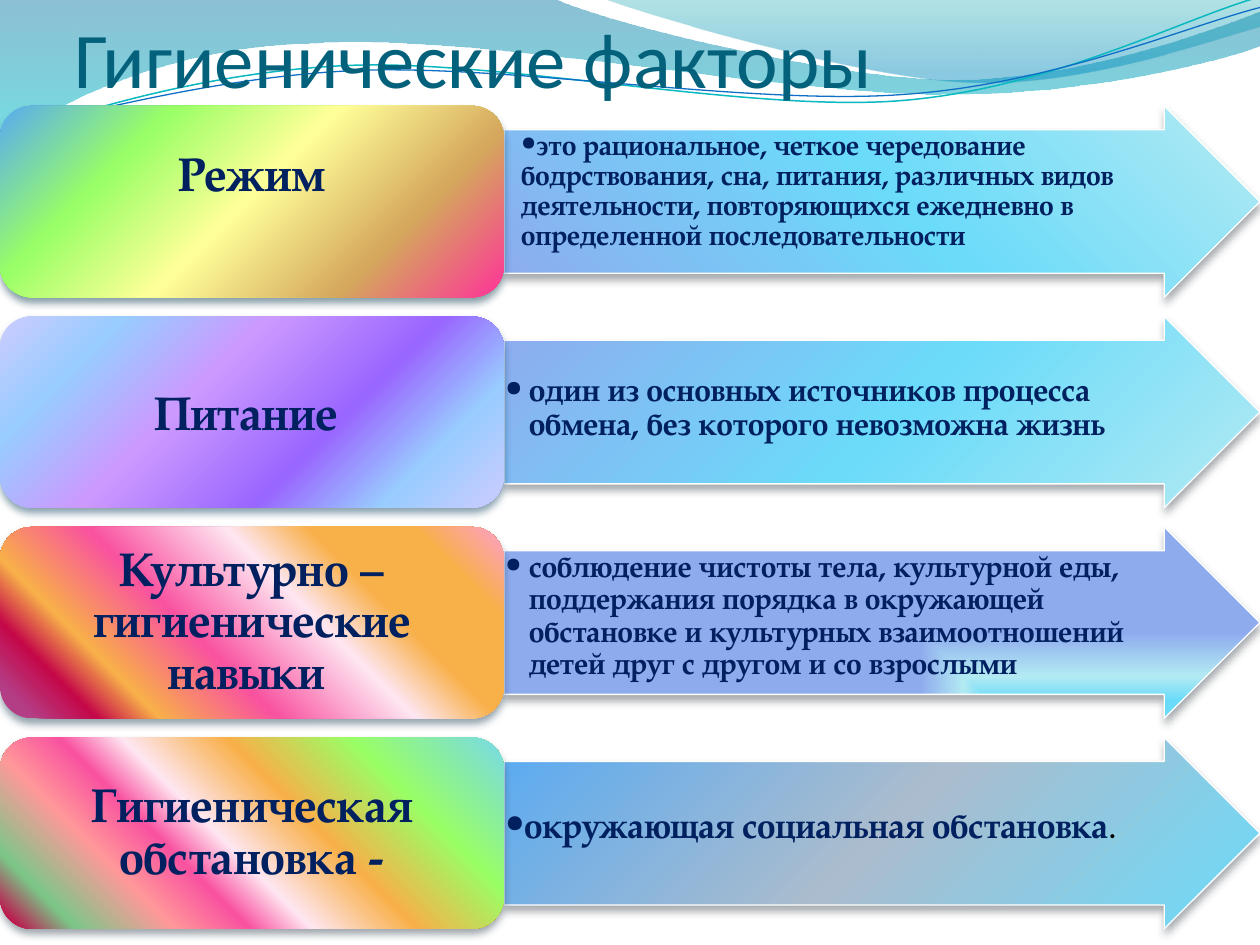
import math

import pptx
import pptx.util
import pptx.dml.color
import pptx.enum.shapes
import pptx.enum.text
import pptx.oxml.ns
import lxml.etree

Pt = pptx.util.Pt
RGBColor = pptx.dml.color.RGBColor
qn = pptx.oxml.ns.qn
Shape = pptx.enum.shapes.MSO_SHAPE
Anchor = pptx.enum.text.MSO_ANCHOR
Align = pptx.enum.text.PP_ALIGN

TITLE_COLOR = RGBColor(0x04, 0x61, 0x7B)
TEXT_COLOR = RGBColor(0x00, 0x20, 0x60)
BLACK = RGBColor(0, 0, 0)
WHITE = RGBColor(0xFF, 0xFF, 0xFF)
TEAL = RGBColor(0x0A, 0xB8, 0xBF)
BLUE = RGBColor(0x0F, 0x6F, 0xC6)
ARROW_SHADOW = RGBColor(0x47, 0x4E, 0x55)
TEXT_FONT = "TeX Gyre Pagella"

ROW_TOP, ROW_PITCH, ROW_HEIGHT = 60.5, 120.3, 109.4
LABEL_WIDTH, ARROW_WIDTH = 288, 432
STRAND_TURN = -2.7

# Focus rectangles of path gradients: left, top, right, bottom
TOP_LEFT, TOP_RIGHT = (0, 0, 100, 100), (100, 0, 0, 100)
BOTTOM_LEFT, BOTTOM_RIGHT = (0, 100, 100, 0), (100, 100, 0, 0)


def stops(text):
    """Read 'position:colour' or 'position:colour:opacity' gradient stops."""
    result = []
    for part in text.split():
        position, color, *opacity = part.split(":")
        result.append((int(position), RGBColor.from_string(color),
                       int(opacity[0]) if opacity else 100))
    return result


ARROW_STOPS = stops("0:8EABEE 52:6BDBFA 100:B3EAF2")

# Waves: a start point, then lines (one point) and curves (three points)
BANDS = [
    ([(0, 0), [(316.8, -0.7)],
      [(342.7, 12.2), (478.1, 45.4), (545.8, 45.4)],
      [(614.2, 45.4), (689.8, 18.7), (720, 6.5)], [(720.7, 25.9)],
      [(707.8, 31.7), (626.4, 54.7), (537.1, 54)],
      [(447.8, 54), (275, 20.2), (185, 24.5)],
      [(92.9, 25.9), (33.1, 59.8), (-0.7, 81.4)]],
     stops("0:0074A1:45 100:00C6CF:55")),
    ([(344.9, -0.7), [(366.5, 7.9), (491, 44.6), (553.7, 46.8)],
      [(616.3, 49.7), (691.9, 23), (720, 15.1)], [(720, 0)]],
     stops("0:00A1A9:30 80:008BBF:45")),
]
STRANDS = [
    ([(0, 79.9), [(34.6, 67), (113.8, 41), (199.4, 37.4)],
      [(284.4, 33.8), (427, 64.1), (513.4, 57.6)],
      [(599.8, 51.1), (675.4, 10.8), (718.6, -1.4)]], (359.3, 41.4), TEAL, 0.85),
    ([(0, 74.9), [(33.8, 69.1), (118.1, 43.9), (203.8, 40.3)],
      [(290.2, 36.7), (429.8, 60.5), (516.2, 54)],
      [(601.9, 48.2), (677.5, 15.1), (720, 4.3)]], (359.6, 42.5), BLUE, 0.75),
]

# Rows: label, arrow text and arrow fill
ROWS = [
    (dict(text="Режим", shadow="003245", lift=33, focus=BOTTOM_RIGHT, spacing=1.0,
          colors="0:FF3399 24:D5A75D 51:FFFF99 75:99FF66 100:59AAF2"),
     dict(text="это рациональное, четкое чередование бодрствования, сна, питания, "
               "различных видов деятельности, повторяющихся ежедневно в "
               "определенной последовательности",
          size=16, margin=9, indent=0, anchor=Anchor.TOP),
     dict(colors=ARROW_STOPS, path="circle", focus=BOTTOM_LEFT)),
    (dict(text="Питание ", shadow="053B56", focus=BOTTOM_RIGHT, spacing=1.0,
          colors="0:CCCCFF 18:99CCFF 36:9966FF 61:CC99FF 82:99CCFF 100:CCCCFF"),
     dict(text="один из основных источников процесса обмена, без которого "
               "невозможна жизнь",
          size=18, margin=13.5, indent=-13.5, anchor=Anchor.MIDDLE, lift=4.6),
     dict(colors=ARROW_STOPS, path="circle", focus=TOP_LEFT)),
    (dict(text="Культурно – гигиенические навыки ", shadow="1E3E52", focus=TOP_RIGHT,
          colors="0:FC9FCB 13:F8B049 28:F8B049 40:FEE7F2 60:F952A0 77:F8B049 "
                 "86:C50849 95:B43E85"),
     dict(text="соблюдение чистоты тела, культурной еды, поддержания порядка в "
               "окружающей обстановке и культурных взаимоотношений детей друг с "
               "другом и со взрослыми",
          size=17, margin=13.5, indent=-13.5, anchor=Anchor.TOP),
     dict(colors=stops("19:6BDBFA 44:B3EAF2 90:8EABEE"), path="rect",
          focus=BOTTOM_RIGHT)),
    (dict(text="Гигиеническая обстановка -", shadow="344451", focus=TOP_RIGHT,
          colors="0:77D9E8 22:99FF66 40:F8B049 55:FEE7F2 64:F952A0 75:FF9999 "
                 "89:7BC788 98:C50849"),
     dict(text="окружающая социальная обстановка", ending=".",
          size=20, margin=0, indent=0, anchor=Anchor.MIDDLE, lift=6.9),
     dict(colors=stops("0:6BDBFA 50:AABCCD 100:59AAF2"), angle=225)),
]


def add_child(parent, tag, **attributes):
    child = lxml.etree.SubElement(parent, qn(tag))
    for name, value in attributes.items():
        child.set(name, str(value))
    return child


def set_gradient(shape, colors, angle=90, path=None, focus=None):
    shape.fill.gradient()
    gradient = shape.element.spPr.find(qn("a:gradFill"))
    gradient.clear()
    gradient.set("rotWithShape", "1")
    stop_list = add_child(gradient, "a:gsLst")
    for position, color, opacity in colors:
        stop = add_child(stop_list, "a:gs", pos=position * 1000)
        tint = add_child(stop, "a:srgbClr", val=color)
        if opacity < 100:
            add_child(tint, "a:alpha", val=opacity * 1000)
    if path:
        target = add_child(gradient, "a:path", path=path)
        sides = {side: part * 1000 for side, part in zip("ltrb", focus)}
        add_child(target, "a:fillToRect", **sides)
    else:
        add_child(gradient, "a:lin", ang=angle * 60000, scaled=0)


def set_shadow(shape, color):
    shape.shadow.inherit = False
    effects = shape.element.spPr.find(qn("a:effectLst"))
    shadow = add_child(effects, "a:outerShdw", blurRad=Pt(4.5), dist=Pt(3),
                       dir=90 * 60000, rotWithShape=0)
    add_child(add_child(shadow, "a:srgbClr", val=color), "a:alpha", val=48000)


def set_frame(frame, anchor, left, top, right, bottom):
    frame.word_wrap = True
    frame.auto_size = pptx.enum.text.MSO_AUTO_SIZE.NONE
    frame.vertical_anchor = anchor
    frame.margin_left, frame.margin_top = Pt(left), Pt(top)
    frame.margin_right, frame.margin_bottom = Pt(right), Pt(bottom)


def set_font(font, name, size, color, bold):
    font.name, font.size, font.bold = name, Pt(size), bold
    font.color.rgb = color


def turn(point, center, degrees):
    angle = math.radians(degrees)
    x, y = point[0] - center[0], point[1] - center[1]
    return (center[0] + x * math.cos(angle) - y * math.sin(angle),
            center[1] + x * math.sin(angle) + y * math.cos(angle))


def add_wave(page, outline, close, center=(0, 0), rotation=0):
    """Draw an outline in points, with its three-point segments as curves."""
    start, *segments = outline
    points = [start] + [point for segment in segments for point in segment]
    points = [turn(point, center, -rotation) for point in points]
    points = [(x * 100, y * 100) for x, y in points]
    builder = page.shapes.build_freeform(*points[0], scale=Pt(1) / 100)
    builder.add_line_segments(points[1:], close=close)
    wave = builder.convert_to_shape()
    steps = iter(list(wave.element.iter(qn("a:lnTo"))))
    for segment in segments:
        first, *others = [next(steps) for _ in segment]
        if others:
            curve = lxml.etree.Element(qn("a:cubicBezTo"))
            first.addprevious(curve)
            for step in (first, *others):
                curve.append(step[0])
                step.getparent().remove(step)
    wave.rotation = rotation
    wave.shadow.inherit = False
    return wave


def add_waves(page):
    for outline, colors in BANDS:
        band = add_wave(page, outline, True)
        set_gradient(band, colors)
        band.line.fill.background()
    for outline, center, color, width in STRANDS:
        strand = add_wave(page, outline, False, center, STRAND_TURN)
        strand.fill.background()
        strand.line.color.rgb, strand.line.width = color, Pt(width)


def add_title(page, text):
    title = page.shapes.title
    title.left, title.top, title.width, title.height = Pt(42.5), Pt(15), Pt(648), Pt(44.6)
    set_frame(title.text_frame, Anchor.BOTTOM, 0, 3.6, 0, 0)
    para = title.text_frame.paragraphs[0]
    para.text, para.alignment = text, Align.LEFT
    set_font(para.font, "Calibri", 45, TITLE_COLOR, False)
    # Bring the title in front of the waves
    title.element.getparent().append(title.element)


def add_arrow(page, top, text, size, margin, indent, anchor, gradient, ending="", lift=0):
    arrow = page.shapes.add_shape(Shape.RIGHT_ARROW, Pt(LABEL_WIDTH), Pt(top),
                                  Pt(ARROW_WIDTH), Pt(ROW_HEIGHT))
    arrow.adjustments[0], arrow.adjustments[1] = 0.75, 0.5
    set_gradient(arrow, **gradient)
    arrow.line.color.rgb, arrow.line.width = WHITE, Pt(0.75)
    set_shadow(arrow, ARROW_SHADOW)
    set_frame(arrow.text_frame, anchor, 0.7, 0.7, 28, 0.7 + lift)
    para = arrow.text_frame.paragraphs[0]
    para.alignment, para.line_spacing = Align.LEFT, 0.9
    properties = para._p.get_or_add_pPr()
    properties.set("marL", str(Pt(margin)))
    properties.set("indent", str(Pt(indent)))
    add_child(properties, "a:buFont", typeface=TEXT_FONT)
    add_child(properties, "a:buChar", char="•")
    set_font(para.font, TEXT_FONT, size, TEXT_COLOR, True)
    para.add_run().text = text
    if ending:
        span = para.add_run()
        span.text = ending
        span.font.bold, span.font.color.rgb = False, BLACK


def add_label(page, top, text, colors, focus, shadow, lift=0, spacing=0.9):
    label = page.shapes.add_shape(Shape.ROUNDED_RECTANGLE, 0, Pt(top),
                                  Pt(LABEL_WIDTH), Pt(ROW_HEIGHT))
    set_gradient(label, stops(colors), path="circle", focus=focus)
    label.line.fill.background()
    set_shadow(label, RGBColor.from_string(shadow))
    set_frame(label.text_frame, Anchor.MIDDLE, 8, 4, 8, 4 + lift)
    para = label.text_frame.paragraphs[0]
    para.text, para.alignment, para.line_spacing = text, Align.CENTER, spacing
    set_font(para.font, TEXT_FONT, 27, TEXT_COLOR, True)


def main():
    deck = pptx.Presentation()
    deck.slide_width, deck.slide_height = Pt(720), Pt(540)
    page = deck.slides.add_slide(deck.slide_layouts[5])
    add_waves(page)
    add_title(page, "Гигиенические факторы")
    for index, (label, arrow, gradient) in enumerate(ROWS):
        top = ROW_TOP + index * ROW_PITCH
        add_arrow(page, top, gradient=gradient, **arrow)
        add_label(page, top, **label)
    deck.save("out.pptx")


if __name__ == "__main__":
    main()
